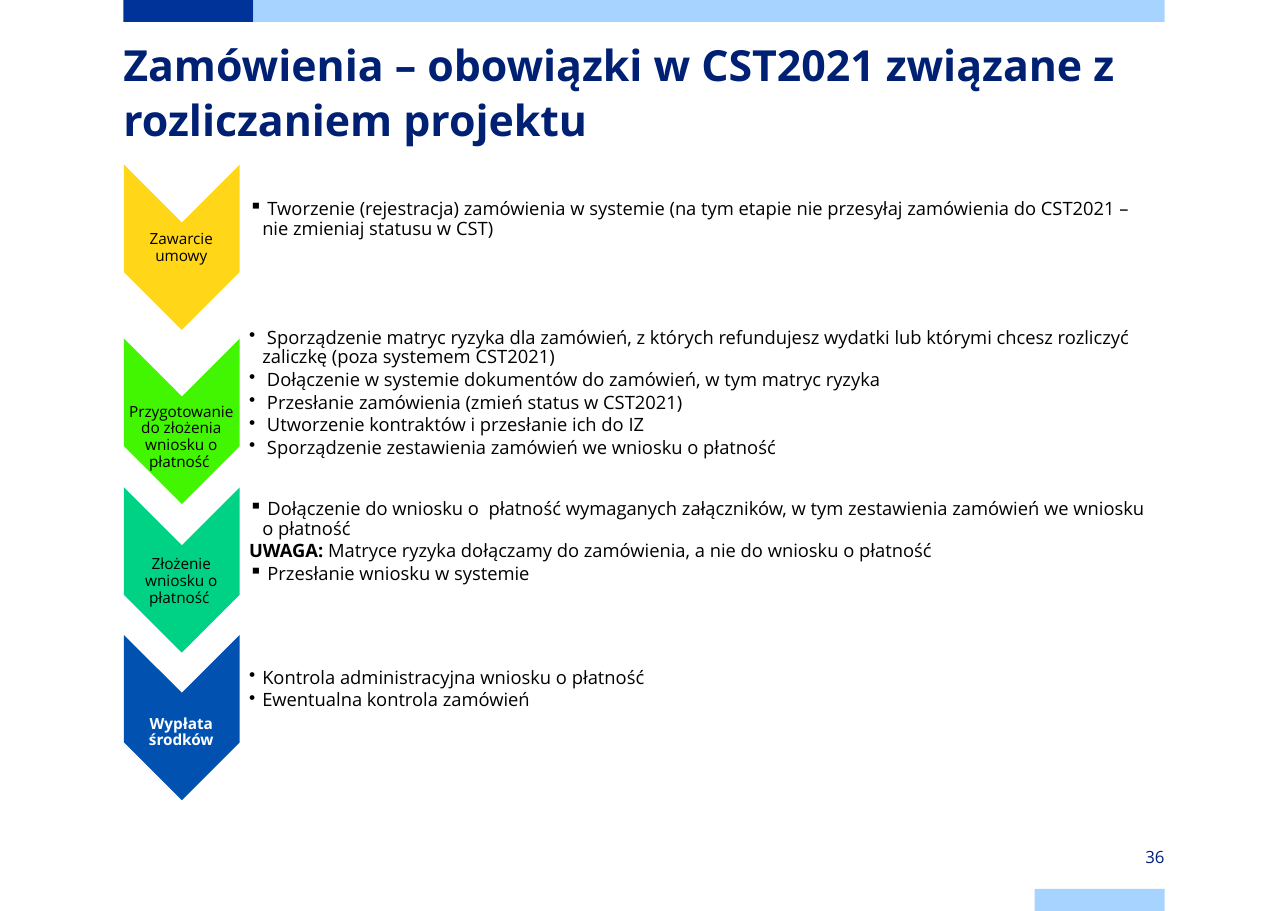
"""Builds the slide on procurement duties when settling a project in CST2021."""
from lxml import etree
from pptx import Presentation, util as u
from pptx.dml.color import RGBColor
from pptx.enum import shapes, text
from pptx.oxml.ns import qn

TITLE = "Zamówienia – obowiązki w CST2021 związane z rozliczaniem projektu"
PAGE_NUMBER = "36"
FONT, NAVY, BLACK, WHITE = "Open Sans", "002073", "000000", "FFFFFF"
BARS = [(112, 0, 118, "003399"), (230, 0, 827, "A6D3FF"), (939, 807, 118, "A6D3FF")]
BAR_HEIGHT = 20

# chevron top, colour, label, label colour, label centre, duties centre, duties
STAGES = [
    (150, "FFD618", "Zawarcie umowy", BLACK, 225, 199, [
        ("▪", "", " Tworzenie (rejestracja) zamówienia w systemie (na tym etapie nie przesyłaj "
                  "zamówienia do CST2021 – nie zmieniaj statusu w CST)")]),
    (308, "42F500", "Przygotowanie do złożenia wniosku o płatność ", BLACK, 397, 357, [
        ("•", "", " Sporządzenie matryc ryzyka dla zamówień, z których refundujesz wydatki "
                  "lub którymi chcesz rozliczyć zaliczkę (poza systemem CST2021)"),
        ("•", "", " Dołączenie w systemie dokumentów do zamówień, w tym matryc ryzyka"),
        ("•", "", " Przesłanie zamówienia (zmień status w CST2021)"),
        ("•", "", " Utworzenie kontraktów i przesłanie ich do IZ"),
        ("•", "", " Sporządzenie zestawienia zamówień we wniosku o płatność")]),
    (443, "00D285", "Złożenie wniosku o płatność ", BLACK, 528, 492, [
        ("▪", "", " Dołączenie do wniosku o  płatność wymaganych załączników, w tym "
                  "zestawienia zamówień we wniosku o płatność"),
        ("", "UWAGA: ", "Matryce ryzyka dołączamy do zamówienia, a nie do wniosku o płatność"),
        ("▪", "", " Przesłanie wniosku w systemie")]),
    (577, "0051B0", "Wypłata środków", WHITE, 665, 626, [
        ("•", "", "Kontrola administracyjna wniosku o płatność"),
        ("•", "", "Ewentualna kontrola zamówień")]),
]
LEFT, CHEVRON_WIDTH, CHEVRON_HEIGHT = 112, 105, 150
LABEL_HEIGHT, DUTIES_WIDTH, DUTIES_HEIGHT = 70, 835, 130


def px(length):
    return u.Emu(length * 9144)


def colour(code):
    return RGBColor.from_string(code)


def add_block(slide, kind, left, top, width, height, fill):
    block = slide.shapes.add_shape(kind, px(left), px(top), px(width), px(height))
    block.shadow.inherit = False
    block.fill.solid()
    block.fill.fore_color.rgb = colour(fill)
    block.line.fill.background()
    return block


def set_frame(frame, insets):
    frame.word_wrap = True
    frame.auto_size = text.MSO_AUTO_SIZE.NONE
    frame.vertical_anchor = text.MSO_ANCHOR.MIDDLE
    frame.margin_left, frame.margin_top, frame.margin_right, frame.margin_bottom = map(px, insets)


def add_frame(slide, left, centre, width, height, insets):
    box = slide.shapes.add_textbox(px(left), px(centre - height // 2), px(width), px(height))
    set_frame(box.text_frame, insets)
    return box.text_frame


def style(run, size, ink, bold=False):
    run.font.name, run.font.size, run.font.bold = FONT, u.Pt(size), bold
    run.font.color.rgb = colour(ink)


def add_duties(frame, duties):
    for index, (bullet, lead, wording) in enumerate(duties):
        duty = frame.add_paragraph() if index else frame.paragraphs[0]
        properties = duty._p.get_or_add_pPr()
        properties.set("marL", str(px(12)))
        properties.set("indent", str(-px(12)))
        if bullet:
            etree.SubElement(properties, qn("a:buChar")).set("char", bullet)
        else:
            etree.SubElement(properties, qn("a:buNone"))
        duty.line_spacing, duty.space_after = 0.9, u.Pt(1.8)
        for part, bold in ((lead, True), (wording, False)):
            if part:
                run = duty.add_run()
                run.text = part
                style(run, 12, BLACK, bold)


def add_stage(slide, top, fill, label, ink, label_centre, duties_centre, duties):
    turn = (CHEVRON_HEIGHT - CHEVRON_WIDTH) // 2
    chevron = add_block(slide, shapes.MSO_SHAPE.CHEVRON, LEFT - turn, top + turn,
                        CHEVRON_HEIGHT, CHEVRON_WIDTH, fill)
    chevron.rotation = 90
    name = add_frame(slide, LEFT, label_centre, CHEVRON_WIDTH, LABEL_HEIGHT, (1, 1, 1, 1))
    name.text = label
    name.paragraphs[0].alignment = text.PP_ALIGN.CENTER
    name.paragraphs[0].line_spacing = 0.9
    style(name.paragraphs[0].runs[0], 10, ink, ink == WHITE)
    add_duties(add_frame(slide, LEFT + CHEVRON_WIDTH, duties_centre, DUTIES_WIDTH,
                         DUTIES_HEIGHT, (9, 1, 1, 1)), duties)


def main():
    deck = Presentation()
    deck.slide_width, deck.slide_height = px(1169), px(827)
    slide = deck.slides.add_slide(deck.slide_layouts[5])
    for left, top, width, fill in BARS:
        add_block(slide, shapes.MSO_SHAPE.RECTANGLE, left, top, width, BAR_HEIGHT, fill)

    title = slide.shapes.title
    title.left, title.top, title.width, title.height = map(px, (LEFT, 29, 945, 106))
    set_frame(title.text_frame, (0, 0, 0, 0))
    title.text_frame.text = TITLE
    heading = title.text_frame.paragraphs[0]
    heading.alignment, heading.line_spacing = text.PP_ALIGN.LEFT, u.Pt(36)
    style(heading.runs[0], 28, NAVY, True)

    for stage in STAGES:
        add_stage(slide, *stage)

    page = add_frame(slide, 939, 778, 118, 20, (0, 0, 0, 0))
    page.text = PAGE_NUMBER
    page.paragraphs[0].alignment = text.PP_ALIGN.RIGHT
    style(page.paragraphs[0].runs[0], 11, NAVY)
    deck.save("out.pptx")


if __name__ == "__main__":
    main()
